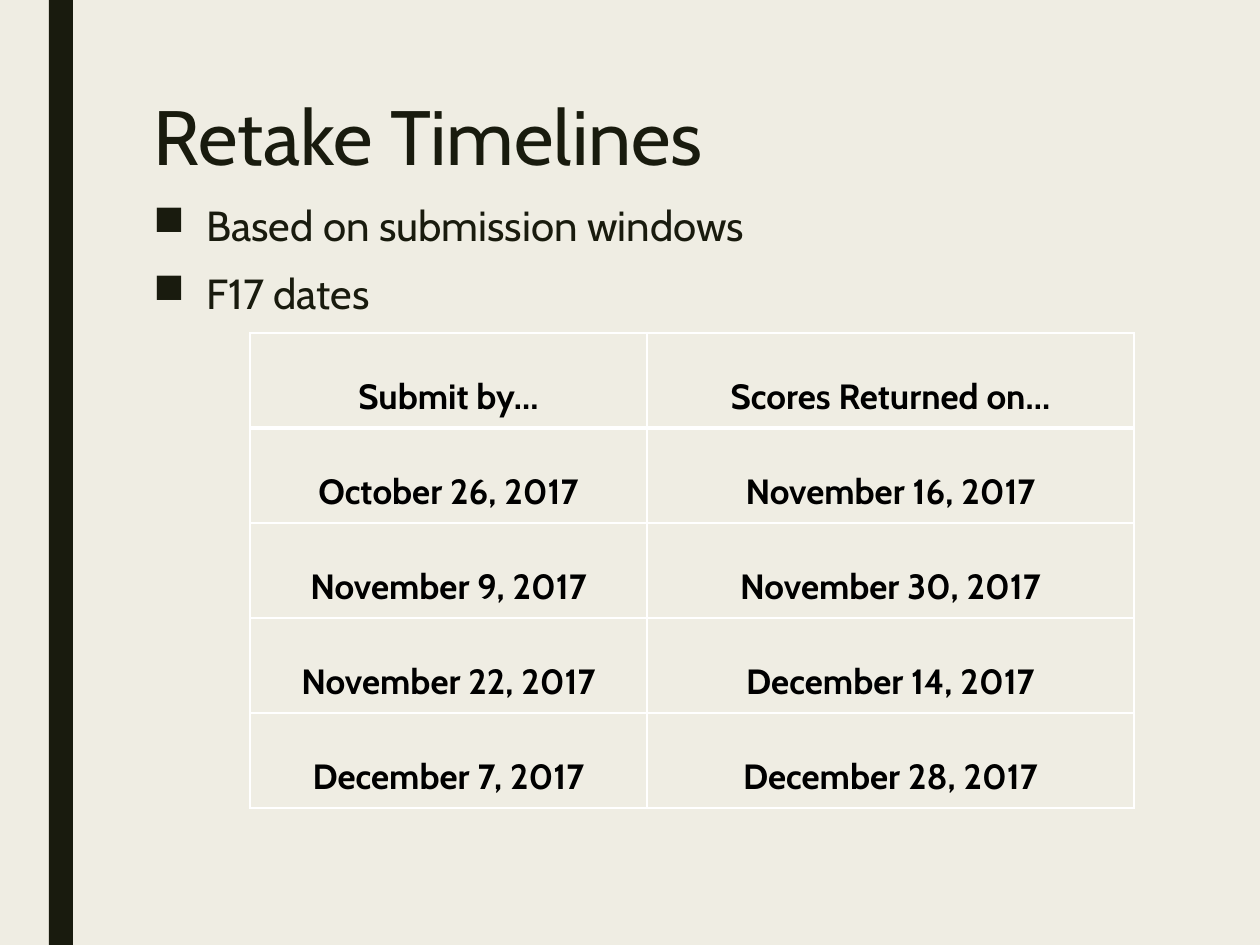
import pptx
import pptx.util
import pptx.dml.color
import pptx.enum.shapes
import pptx.enum.text
import pptx.oxml
import pptx.oxml.ns

FONT = "Cabin"
DARK, BACKGROUND, BLACK, WHITE = "191B0E", "EFEDE3", "000000", "FFFFFF"

TITLE = "Retake Timelines"
BULLETS = ["Based on submission windows", "F17 dates"]
DATES = [
    ("Submit by…", "Scores Returned on…"),
    ("October 26, 2017", "November 16, 2017"),
    ("November 9, 2017", "November 30, 2017"),
    ("November 22, 2017", "December 14, 2017"),
    ("December 7, 2017", "December 28, 2017"),
]

SLIDE_SIZE = (1260, 945)
BAR_BOX = (49, 0, 24, 945)
TITLE_BOX = (141, 94, 993, 102)
BODY_BOX = (141, 197, 993, 611)
TABLE_LEFT, TABLE_TOP = 250, 333
COLUMN_WIDTHS = (397, 487)
ROW_HEIGHT = 95
BULLET_INDENT = 53


def px(value):
    return round(value * 914400 / 126)


def color(value):
    return pptx.dml.color.RGBColor.from_string(value)


def format_runs(paragraph, size, fill, bold=False):
    for run in paragraph.runs:
        run.font.name = FONT
        run.font.size = pptx.util.Pt(size)
        run.font.bold = bold
        run.font.color.rgb = color(fill)


def add_text(slide, box, lines, size, spacing):
    text_frame = slide.shapes.add_textbox(*map(px, box)).text_frame
    text_frame.word_wrap = True
    text_frame.text = "\n".join(lines)
    for paragraph in text_frame.paragraphs:
        paragraph.line_spacing = spacing
        format_runs(paragraph, size, DARK)
    return text_frame


def add_bullet(paragraph):
    paragraph.space_before = pptx.util.Pt(10)
    paragraph.space_after = pptx.util.Pt(2)
    properties = paragraph._p.get_or_add_pPr()
    properties.set("marL", str(px(BULLET_INDENT)))
    properties.set("indent", str(-px(BULLET_INDENT)))
    bullet = pptx.oxml.parse_xml(
        f'<a:buChar {pptx.oxml.ns.nsdecls("a")} char="■"/>')
    properties.append(bullet)


def set_borders(cell, widths):
    properties = cell._tc.get_or_add_tcPr()
    for index, (side, width) in enumerate(widths.items()):
        border = pptx.oxml.parse_xml(
            f'<a:ln{side} {pptx.oxml.ns.nsdecls("a")} w="{pptx.util.Pt(width)}">'
            f'<a:solidFill><a:srgbClr val="{WHITE}"/></a:solidFill></a:ln{side}>')
        properties.insert(index, border)


def add_dates_table(slide):
    table = slide.shapes.add_table(
        len(DATES), len(COLUMN_WIDTHS), px(TABLE_LEFT), px(TABLE_TOP),
        px(sum(COLUMN_WIDTHS)), px(ROW_HEIGHT * len(DATES))).table
    for column, width in zip(table.columns, COLUMN_WIDTHS):
        column.width = px(width)
    for row_index, row in enumerate(DATES):
        table.rows[row_index].height = px(ROW_HEIGHT)
        top = 3 if row_index == 1 else 1
        bottom = 3 if row_index == 0 else 1
        for column_index, text in enumerate(row):
            cell = table.cell(row_index, column_index)
            cell.fill.background()
            cell.margin_left = cell.margin_right = px(9)
            cell.margin_top, cell.margin_bottom = px(43), 0
            cell.text_frame.text = text
            paragraph = cell.text_frame.paragraphs[0]
            paragraph.alignment = pptx.enum.text.PP_ALIGN.CENTER
            format_runs(paragraph, 20, BLACK, bold=True)
            set_borders(cell, {"L": 1, "R": 1, "T": top, "B": bottom})


def main():
    presentation = pptx.Presentation()
    presentation.slide_width, presentation.slide_height = map(px, SLIDE_SIZE)
    slide = presentation.slides.add_slide(presentation.slide_layouts[6])
    slide.background.fill.solid()
    slide.background.fill.fore_color.rgb = color(BACKGROUND)

    bar = slide.shapes.add_shape(
        pptx.enum.shapes.MSO_SHAPE.RECTANGLE, *map(px, BAR_BOX))
    bar.shadow.inherit = False
    bar.fill.solid()
    bar.fill.fore_color.rgb = color(DARK)
    bar.line.fill.background()

    add_text(slide, TITLE_BOX, [TITLE], 44, 0.89)
    body = add_text(slide, BODY_BOX, BULLETS, 24, 0.94)
    for paragraph in body.paragraphs:
        add_bullet(paragraph)
    add_dates_table(slide)
    presentation.save("out.pptx")


if __name__ == "__main__":
    main()
